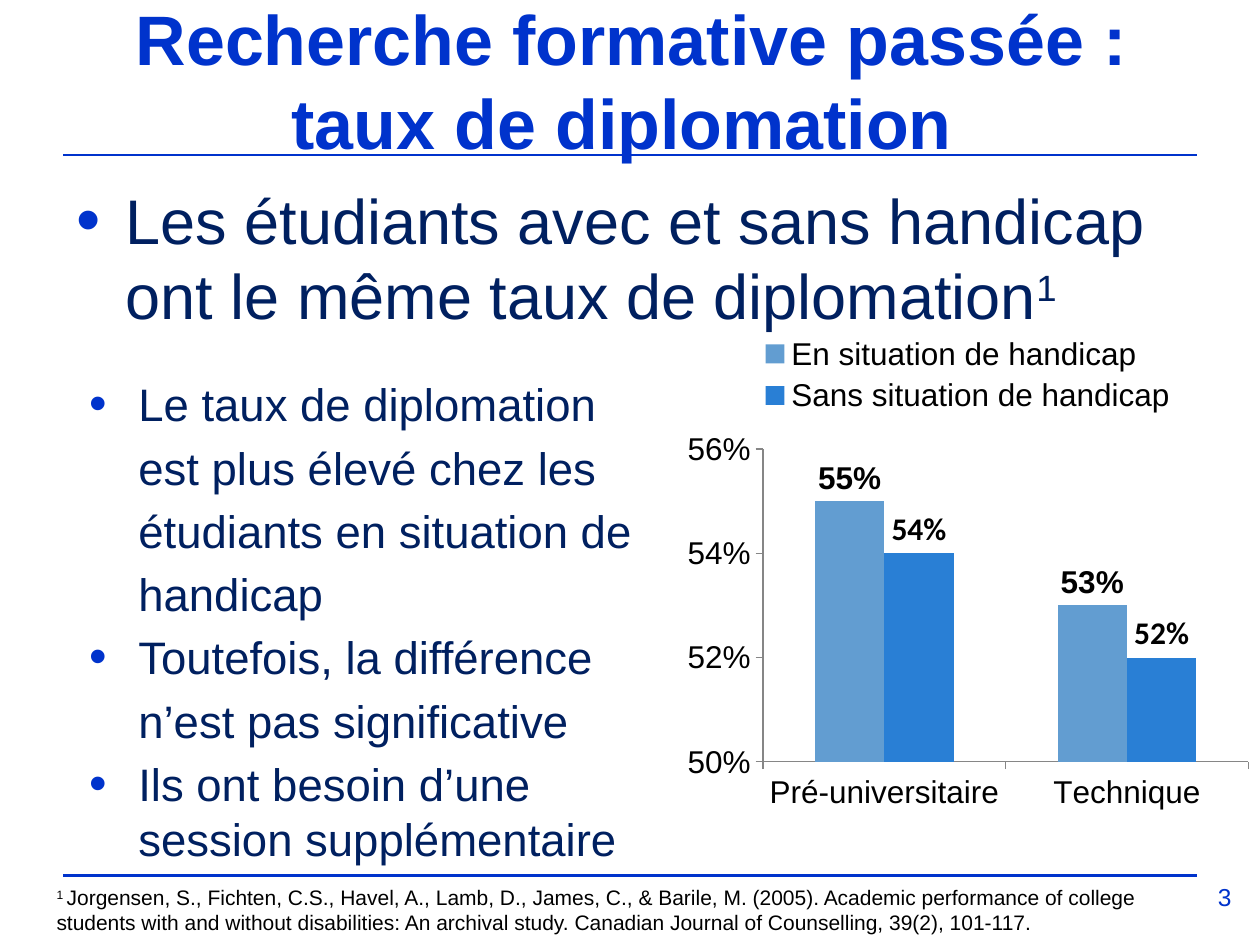
from pptx import Presentation
from pptx.chart.data import CategoryChartData
from pptx.dml.color import RGBColor
from pptx.enum.chart import (XL_CHART_TYPE as ChartType, XL_LABEL_POSITION as LabelPosition,
                             XL_LEGEND_POSITION as LegendPosition, XL_TICK_MARK as TickMark)
from pptx.enum.shapes import MSO_CONNECTOR as Connector
from pptx.enum.text import MSO_ANCHOR as Anchor, PP_ALIGN as Align
from pptx.oxml import parse_xml
from pptx.oxml.ns import nsdecls, qn
from pptx.util import Inches, Pt

BLUE = RGBColor(0x00, 0x33, 0xCC)
NAVY = RGBColor(0x00, 0x20, 0x60)
BLACK = RGBColor(0x00, 0x00, 0x00)
GRAY = RGBColor(0x86, 0x86, 0x86)
LIGHT_BAR = RGBColor(0x62, 0x9D, 0xD1)
DARK_BAR = RGBColor(0x29, 0x7F, 0xD5)

POINTS = [
    ["Le taux de diplomation", "est plus élevé chez les", "étudiants en situation de", "handicap"],
    ["Toutefois, la différence", "n’est pas significative"],
    ["Ils ont besoin d’une\vsession supplémentaire"],
]
REFERENCE = ("Jorgensen, S., Fichten, C.S., Havel, A., Lamb, D., James, C., & Barile, M. (2005). "
             "Academic performance of college students with and without disabilities: An archival "
             "study. Canadian Journal of Counselling, 39(2), 101-117.")
SERIES = [("En situation de handicap", (0.55, 0.53), LIGHT_BAR, "Arial"),
          ("Sans situation de handicap", (0.54, 0.52), DARK_BAR, "Calibri")]


def apply(target, values):
    for name, value in values.items():
        setattr(target, name, value)


def set_font(font, color, **values):
    apply(font, values)
    font.color.rgb = color


def set_layout(element, left, top, width, height, inner=False):
    """Place a chart part by fractions of the chart's size."""
    old = element.find(qn("c:layout"))
    if old is not None:
        element.remove(old)
    target = '<c:layoutTarget val="inner"/>' if inner else ""
    layout = parse_xml(
        f'<c:layout {nsdecls("c")}><c:manualLayout>{target}'
        '<c:xMode val="edge"/><c:yMode val="edge"/>'
        f'<c:x val="{left}"/><c:y val="{top}"/><c:w val="{width}"/><c:h val="{height}"/>'
        '</c:manualLayout></c:layout>')
    position = element.find(qn("c:legendPos"))
    if position is None:
        element.insert(0, layout)
    else:
        position.addnext(layout)


class SlideBuilder:
    font_name = "Arial"

    def __init__(self, slide):
        self.slide = slide

    def rule(self, top):
        line = self.slide.shapes.add_connector(
            Connector.STRAIGHT, Inches(0.5), Inches(top), Inches(9.5), Inches(top))
        line.line.color.rgb = BLUE
        line.line.width = Pt(1.5)
        line._element.spPr.append(parse_xml(f'<a:effectLst {nsdecls("a")}/>'))

    def box(self, left, top, width, height, anchor=Anchor.TOP):
        box = self.slide.shapes.add_textbox(*map(Inches, (left, top, width, height)))
        apply(box.text_frame, {"word_wrap": True, "vertical_anchor": anchor})
        return box.text_frame

    def para(self, frame, text, size, color, bold=False, indent=None, bullet=False, **values):
        first = frame.paragraphs[0]
        para = frame.add_paragraph() if first.runs else first
        if indent:
            properties = para._p.get_or_add_pPr()
            properties.set("marL", str(Inches(indent)))
            properties.set("indent", str(Inches(-0.39 if bullet else 0)))
            if bullet:
                for xml in (f'<a:buClr {nsdecls("a")}><a:srgbClr val="{BLUE}"/></a:buClr>',
                            f'<a:buSzPct {nsdecls("a")} val="110000"/>',
                            f'<a:buFont {nsdecls("a")} typeface="Arial"/>',
                            f'<a:buChar {nsdecls("a")} char="•"/>'):
                    properties.append(parse_xml(xml))
        apply(para, values)
        for number, part in enumerate(text.split("\v")):
            if number:
                para.add_line_break()
            self.span(para, part, size, color, bold)
        return para

    def span(self, para, text, size, color, bold=False, raised=False):
        span = para.add_run()
        span.text = text
        set_font(span.font, color, name=self.font_name, size=Pt(size), bold=bold)
        if raised:
            span._r.get_or_add_rPr().set("baseline", "30000")

    def chart(self, left, top, width, height):
        data = CategoryChartData(number_format="0%")
        data.categories = ["Pré-universitaire", "Technique"]
        for name, values, _, _ in SERIES:
            data.add_series(name, values)
        chart = self.slide.shapes.add_chart(
            ChartType.COLUMN_CLUSTERED, *map(Inches, (left, top, width, height)), data).chart
        set_font(chart.font, BLACK, name=self.font_name, size=Pt(18))
        apply(chart, {"has_title": False, "has_legend": True})
        apply(chart.legend, {"position": LegendPosition.TOP, "include_in_layout": False})
        set_font(chart.legend.font, BLACK, name=self.font_name, size=Pt(18))
        set_layout(chart.legend._element, 0.09, 0.01, 0.82, 0.18)
        set_layout(chart._chartSpace.chart.plotArea, 0.15, 0.25, 0.83, 0.63, inner=True)

        for axis in (chart.category_axis, chart.value_axis):
            apply(axis, {"has_major_gridlines": False, "major_tick_mark": TickMark.OUTSIDE})
            axis.format.line.color.rgb = GRAY
            set_font(axis.tick_labels.font, BLACK, name=self.font_name, size=Pt(18))
        apply(chart.value_axis, {"minimum_scale": 0.5, "maximum_scale": 0.56, "major_unit": 0.02})
        apply(chart.value_axis.tick_labels, {"number_format": "0%", "number_format_is_linked": False})

        plot = chart.plots[0]
        apply(plot, {"gap_width": 150, "overlap": 0, "vary_by_categories": False})
        for series, (_, _, color, font_name) in zip(plot.series, SERIES):
            series.format.fill.solid()
            series.format.fill.fore_color.rgb = color
            labels = series.data_labels
            apply(labels, {"show_value": True, "number_format": "0%",
                           "number_format_is_linked": False, "position": LabelPosition.OUTSIDE_END})
            set_font(labels.font, BLACK, name=font_name, size=Pt(18), bold=True)


def main():
    deck = Presentation()
    apply(deck, {"slide_width": Inches(10), "slide_height": Inches(7.5)})
    page = SlideBuilder(deck.slides.add_slide(deck.slide_layouts[6]))

    for top in (6.95, 1.23):
        page.rule(top)

    title = page.box(0.51, 0.6, 9, 0.75, Anchor.BOTTOM)
    page.para(title, "Recherche formative passée : taux de diplomation ", 40, BLUE, bold=True,
              alignment=Align.CENTER)

    body = page.box(0.5, 1.39, 9, 5.35)
    finding = page.para(body, "Les étudiants avec et sans handicap ont le même taux de diplomation",
                        36, NAVY, indent=0.4, bullet=True)
    page.span(finding, "1", 36, NAVY, raised=True)
    for point_number, lines in enumerate(POINTS):
        for line_number, line in enumerate(lines):
            opening = point_number == line_number == 0
            page.para(body, line, 26, NAVY, indent=0.5, bullet=line_number == 0,
                      space_before=Pt(25 if opening else 5))

    number = page.box(9.44, 6.95, 0.56, 0.42)
    page.para(number, "3", 14, BLUE, alignment=Align.CENTER)

    note = page.box(0.35, 6.97, 9.21, 0.5)
    mark = note.paragraphs[0]
    page.span(mark, "1 ", 12, BLACK, raised=True)
    page.span(mark, REFERENCE, 12, BLACK)

    page.chart(5.36, 2.58, 4.64, 3.94)
    deck.save("out.pptx")


if __name__ == "__main__":
    main()
